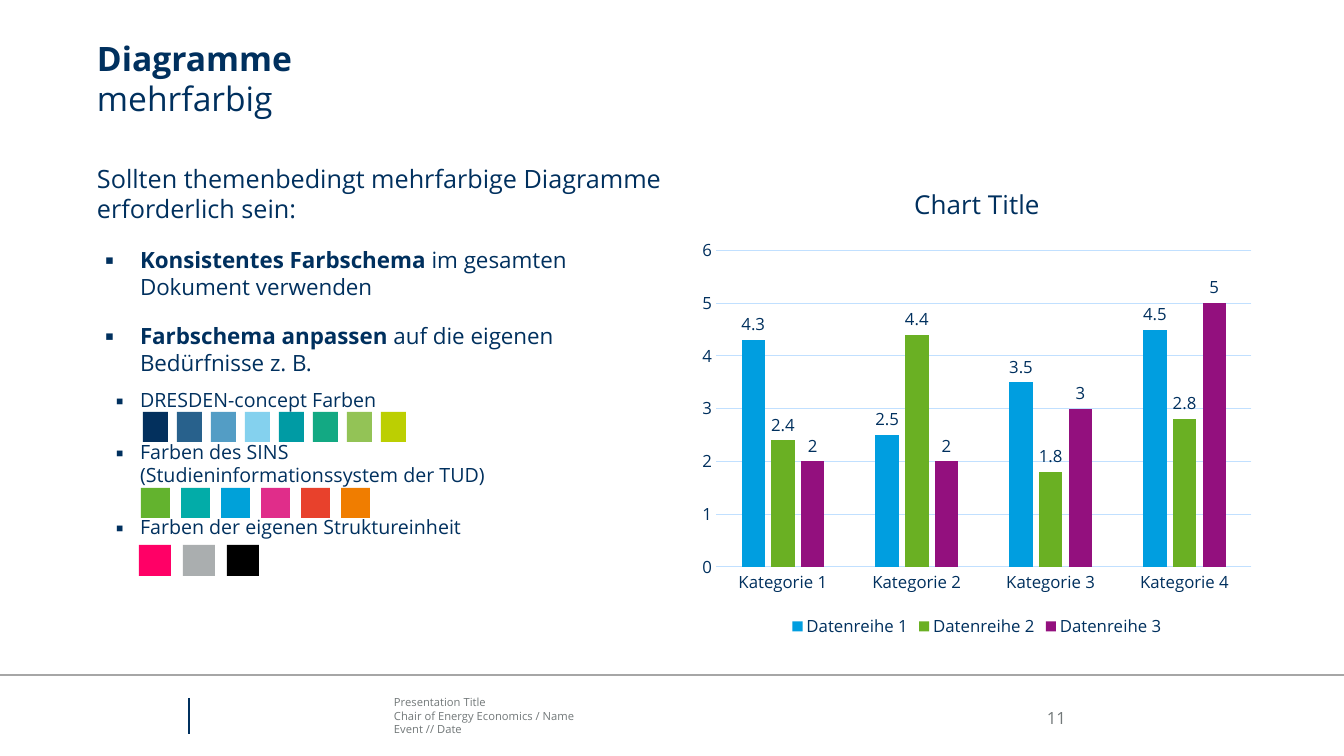
from dataclasses import dataclass

from lxml.etree import SubElement
from pptx import Presentation
from pptx.chart.data import CategoryChartData
from pptx.dml.color import RGBColor
from pptx.enum.chart import XL_CHART_TYPE, XL_LABEL_POSITION, XL_LEGEND_POSITION, XL_TICK_MARK
from pptx.enum.shapes import MSO_CONNECTOR, MSO_SHAPE
from pptx.enum.text import MSO_ANCHOR, PP_ALIGN
from pptx.oxml.ns import qn
from pptx.util import Emu, Pt


@dataclass(frozen=True)
class Theme:
    font: str = "Open Sans"
    navy: str = "00305E"
    grey: str = "727879"
    rule: str = "A6A6A6"
    grid: str = "C1E0FF"
    title: int = 24
    chart_title: float = 18.6
    lead: int = 18
    point: int = 16
    detail: int = 14
    label: int = 12
    footer: int = 8


THEME = Theme()
SLIDE_SIZE = (1344, 756)

# Each paragraph: its runs as (text, bold), then its format
TITLE = [([("Diagramme\n", True), ("mehrfarbig", False)], {})]
POINT = {"size": THEME.point, "level": 1, "hanging": 35, "before": 16}
DETAIL = {"size": THEME.detail, "level": 3, "hanging": 24, "before": 20}
BODY = [
    ([("Sollten themenbedingt mehrfarbige Diagramme erforderlich sein:", False)], {}),
    ([("Konsistentes Farbschema ", True), ("im gesamten Dokument verwenden", False)], POINT),
    ([("Farbschema anpassen ", True), ("auf die eigenen Bedürfnisse z. B.", False)],
     POINT | {"after": 6}),
    ([("DRESDEN-concept Farben", False)], DETAIL | {"before": 3}),
    ([("Farben des SINS \n(Studieninformationssystem der TUD)", False)], DETAIL),
    ([("Farben der eigenen Struktureinheit", False)], DETAIL),
]
FOOTER = [([(line, False)], {}) for line in
          ("Presentation Title", "Chair of Energy Economics / Name", "Event // Date")]
PAGE_NUMBER = [([("11", False)], {})]

# left, top, width, height of the first swatch; step to the next; colours
SWATCH_ROWS = [
    ((143, 412, 25, 30), 34, ["03305D", "28618C", "539DC5", "84D1EE",
                              "009BA4", "13A983", "93C356", "BCCF02"]),
    ((141, 488, 29, 30), 40, ["63B32E", "02ACA8", "00A1D9", "E02D8A", "E8412C", "F07D00"]),
    ((139, 545, 32, 31), 44, ["FF0066", "AAAEAF", "000000"]),
]

CHART_TITLE = "Chart Title"
CATEGORIES = ["Kategorie 1", "Kategorie 2", "Kategorie 3", "Kategorie 4"]
SERIES = [
    ("Datenreihe 1", [4.3, 2.5, 3.5, 4.5], "009EE0"),
    ("Datenreihe 2", [2.4, 4.4, 1.8, 2.8], "6AB023"),
    ("Datenreihe 3", [2, 2, 3, 5], "93107E"),
]


def px(value):
    return Emu(round(value * 914400 / 100.8))


def color(code):
    return RGBColor.from_string(code)


def style_font(font, size, code=THEME.navy, bold=False):
    font.name, font.size, font.bold = THEME.font, Pt(size), bold
    font.color.rgb = color(code)


def style_line(line, code, width):
    line.color.rgb = color(code)
    line.width = Pt(width)


def add_bullet(paragraph, hanging):
    properties = paragraph._p.get_or_add_pPr()
    properties.set("marL", str(px(43)))
    properties.set("indent", str(-px(hanging)))
    SubElement(properties, qn("a:buFont")).set("typeface", THEME.font)
    SubElement(properties, qn("a:buChar")).set("char", "▪")


def add_text(slide, box, paragraphs, size, code=THEME.navy,
             align=PP_ALIGN.LEFT, anchor=MSO_ANCHOR.TOP):
    frame = slide.shapes.add_textbox(*map(px, box)).text_frame
    frame.word_wrap = True
    frame.vertical_anchor = anchor
    frame.margin_left = frame.margin_top = frame.margin_right = frame.margin_bottom = 0
    for index, (runs, layout) in enumerate(paragraphs):
        paragraph = frame.add_paragraph() if index else frame.paragraphs[0]
        if "hanging" in layout:
            add_bullet(paragraph, layout["hanging"])
        paragraph.level = layout.get("level", 0)
        paragraph.alignment = align
        paragraph.space_before = Pt(layout.get("before", 0))
        paragraph.space_after = Pt(layout.get("after", 0))
        for text, bold in runs:
            for number, part in enumerate(text.split("\n")):
                if number:
                    paragraph.add_line_break()
                if part:
                    run = paragraph.add_run()
                    run.text = part
                    style_font(run.font, layout.get("size", size), code, bold)


def add_line(slide, start, end, code, width):
    connector = slide.shapes.add_connector(MSO_CONNECTOR.STRAIGHT, *map(px, start + end))
    style_line(connector.line, code, width)
    SubElement(connector._element.spPr, qn("a:effectLst"))


def add_swatches(slide, first, step, codes):
    left, top, width, height = first
    for index, code in enumerate(codes):
        swatch = slide.shapes.add_shape(
            MSO_SHAPE.RECTANGLE, px(left + index * step), px(top), px(width), px(height))
        swatch.shadow.inherit = False
        swatch.fill.solid()
        swatch.fill.fore_color.rgb = color(code)
        swatch.line.fill.background()


def add_column_chart(slide, box):
    data = CategoryChartData()
    data.categories = CATEGORIES
    for name, values, _ in SERIES:
        data.add_series(name, values)
    chart = slide.shapes.add_chart(
        XL_CHART_TYPE.COLUMN_CLUSTERED, *map(px, box), data).chart
    style_font(chart.font, THEME.label)

    chart.has_title = True
    title = chart.chart_title
    title.include_in_layout = False
    title.text_frame.text = CHART_TITLE
    style_font(title.text_frame.paragraphs[0].runs[0].font, THEME.chart_title)

    chart.has_legend = True
    chart.legend.position = XL_LEGEND_POSITION.BOTTOM
    chart.legend.include_in_layout = False
    style_font(chart.legend.font, THEME.label)

    for axis in (chart.category_axis, chart.value_axis):
        axis.major_tick_mark = axis.minor_tick_mark = XL_TICK_MARK.NONE
        style_font(axis.tick_labels.font, THEME.label)
    style_line(chart.category_axis.format.line, THEME.grid, 0.75)
    values_axis = chart.value_axis
    values_axis.minimum_scale, values_axis.maximum_scale, values_axis.major_unit = 0, 6, 1
    values_axis.format.line.fill.background()
    values_axis.has_major_gridlines = True
    style_line(values_axis.major_gridlines.format.line, THEME.grid, 0.75)

    plot = chart.plots[0]
    plot.vary_by_categories = False
    plot.gap_width, plot.overlap = 219, -27
    for series, (_, _, code) in zip(plot.series, SERIES):
        series.format.fill.solid()
        series.format.fill.fore_color.rgb = color(code)
        labels = series.data_labels
        labels.show_value = True
        labels.position = XL_LABEL_POSITION.OUTSIDE_END
        style_font(labels.font, THEME.label)


def main():
    presentation = Presentation()
    presentation.slide_width, presentation.slide_height = map(px, SLIDE_SIZE)
    slide = presentation.slides.add_slide(presentation.slide_layouts[6])

    add_text(slide, (394, 695, 572, 41), FOOTER, THEME.footer, THEME.grey,
             anchor=MSO_ANCHOR.BOTTOM)
    add_line(slide, (0, 675), (1344, 675), THEME.rule, 1)
    add_text(slide, (988, 707, 78, 21), PAGE_NUMBER, THEME.label, THEME.grey,
             align=PP_ALIGN.RIGHT, anchor=MSO_ANCHOR.BOTTOM)
    add_line(slide, (189, 698), (189, 734), THEME.navy, 1.5)
    add_text(slide, (97, 38, 1166, 76), TITLE, THEME.title)
    add_column_chart(slide, (691, 163, 572, 479))
    add_text(slide, (97, 163, 573, 479), BODY, THEME.lead)
    for first, step, codes in SWATCH_ROWS:
        add_swatches(slide, first, step, codes)

    presentation.save("out.pptx")


if __name__ == "__main__":
    main()
